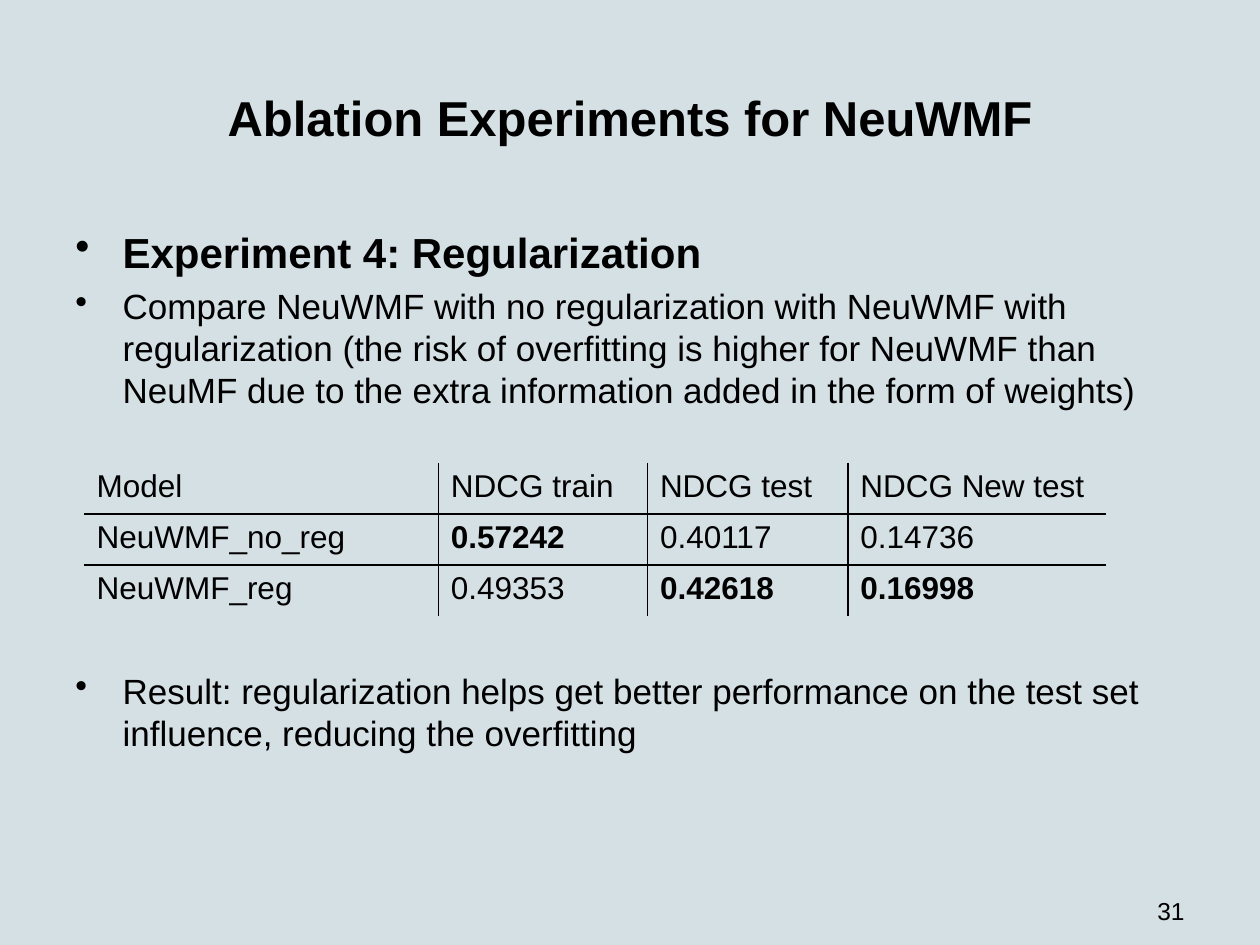
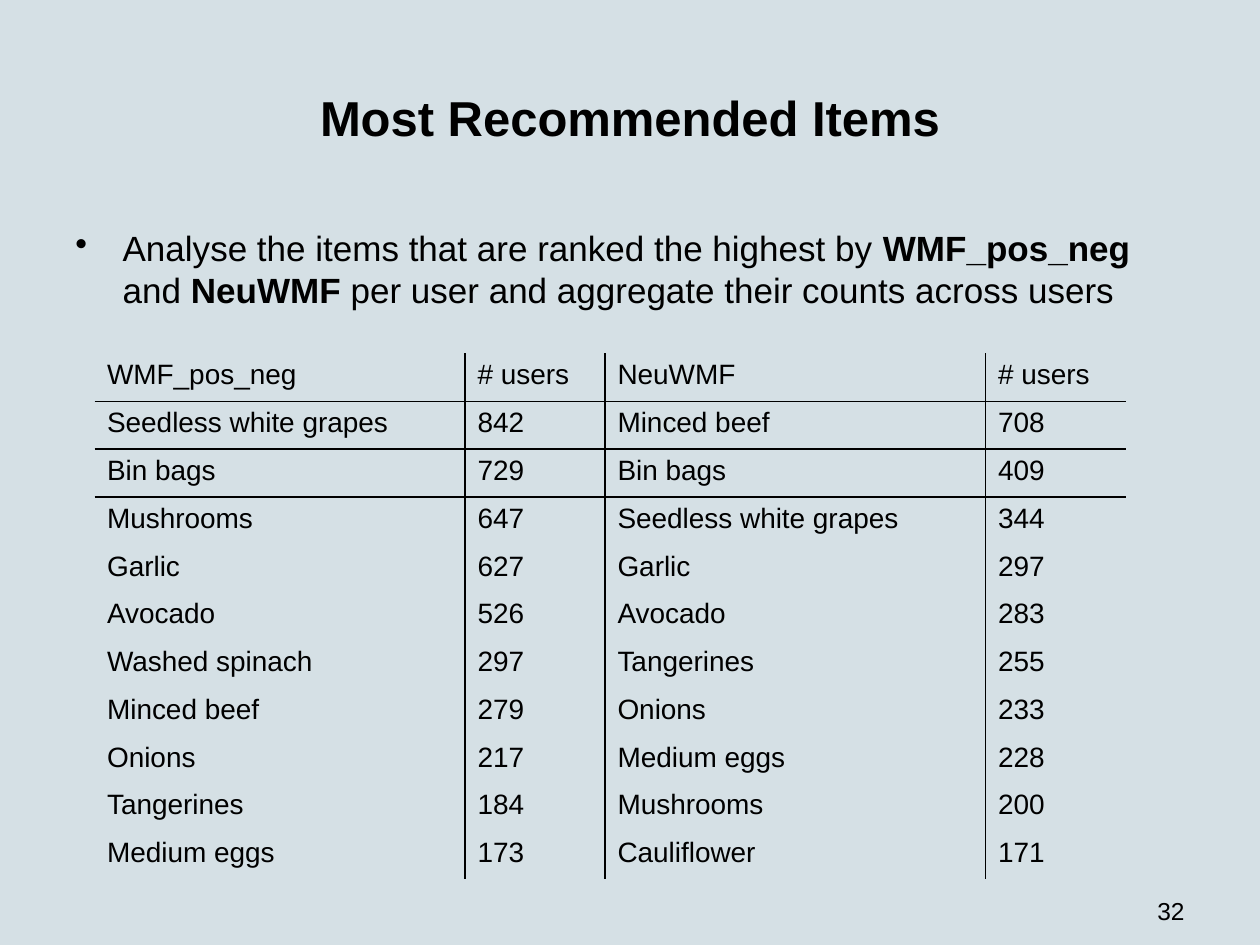
import pptx
import pptx.dml.color
import pptx.enum.text
import pptx.oxml
import pptx.oxml.ns
import pptx.util
from pptx.util import Pt

FONT = "Arial"
INK = "000000"
BACKGROUND = "D5E0E5"
NO_STYLE = "{2D5ABB26-0587-4C30-8999-92F81FD0307C}"  # "No Style, No Grid"
INDENT = Pt(27)

ALIGN = pptx.enum.text.PP_ALIGN
ANCHOR = pptx.enum.text.MSO_ANCHOR

SLIDES = [
    {
        "title": "Ablation Experiments for NeuWMF",
        "number": "31",
        # Each text block: top, height, and paragraphs of (size, [(text, bold)])
        "texts": [
            (126, 356, [
                (24, [("Experiment 4: Regularization", True)]),
                (20, [("Compare NeuWMF with no regularization with NeuWMF with "
                       "regularization (the risk of overfitting is higher for NeuWMF than "
                       "NeuMF due to the extra information added in the form of weights)", False)]),
            ]),
            (379, 130, [
                (20, [("Result: regularization helps get better performance on the test set "
                       "influence, reducing the overfitting", False)]),
            ]),
        ],
        "table": {
            "left": 48, "top": 264.5, "size": 18, "row_height": 29.2,
            "widths": [202.5, 119.5, 114.5, 147.5],
            "ruled_columns": 2,
            "bold": {(1, 1), (2, 2), (2, 3)},
            "rows": [
                ["Model", "NDCG train", "NDCG test", "NDCG New test"],
                ["NeuWMF_no_reg", "0.57242", "0.40117", "0.14736"],
                ["NeuWMF_reg", "0.49353", "0.42618", "0.16998"],
            ],
        },
    },
    {
        "title": "Most Recommended Items",
        "number": "32",
        "texts": [
            (126, 356, [
                (20, [("Analyse the items that are ranked the highest by ", False),
                      ("WMF_pos_neg", True),
                      (" and ", False),
                      ("NeuWMF", True),
                      (" per user and aggregate their counts across users", False)]),
            ]),
        ],
        "table": {
            "left": 54, "top": 202, "size": 16, "row_height": 27.3,
            "widths": [211.7, 80, 217.5, 80],
            "ruled_columns": 3,
            "bold": set(),
            "rows": [
                ["WMF_pos_neg", "# users", "NeuWMF", "# users"],
                ["Seedless white grapes", "842", "Minced beef", "708"],
                ["Bin bags", "729", "Bin bags", "409"],
                ["Mushrooms", "647", "Seedless white grapes", "344"],
                ["Garlic", "627", "Garlic", "297"],
                ["Avocado", "526", "Avocado", "283"],
                ["Washed spinach", "297", "Tangerines", "255"],
                ["Minced beef", "279", "Onions", "233"],
                ["Onions", "217", "Medium eggs", "228"],
                ["Tangerines", "184", "Mushrooms", "200"],
                ["Medium eggs", "173", "Cauliflower", "171"],
            ],
        },
    },
]


def color(hex_string):
    return pptx.dml.color.RGBColor.from_string(hex_string)


def add_run(paragraph, text, size, bold=False):
    run = paragraph.add_run()
    run.text = text
    run.font.name = FONT
    run.font.size = Pt(size)
    run.font.bold = bold
    run.font.color.rgb = color(INK)


presentation = pptx.Presentation()
presentation.slide_width = Pt(720)
presentation.slide_height = Pt(540)

# Shared background
background = presentation.slide_master.background.fill
background.solid()
background.fore_color.rgb = color(BACKGROUND)

for content in SLIDES:
    slide = presentation.slides.add_slide(presentation.slide_layouts[5])

    # Title
    title = slide.shapes.title
    title.left, title.top, title.width, title.height = Pt(36), Pt(21.6), Pt(648), Pt(90)
    title.text_frame.vertical_anchor = ANCHOR.MIDDLE
    paragraph = title.text_frame.paragraphs[0]
    paragraph.alignment = ALIGN.CENTER
    add_run(paragraph, content["title"], 28, True)

    # Bulleted text
    for top, height, paragraphs in content["texts"]:
        box = slide.shapes.add_textbox(Pt(36), Pt(top), Pt(648), Pt(height))
        frame = box.text_frame
        frame.word_wrap = True
        for index, (size, runs) in enumerate(paragraphs):
            paragraph = frame.add_paragraph() if index else frame.paragraphs[0]
            paragraph.space_before = paragraph.space_after = Pt(size / 10)
            properties = paragraph._p.get_or_add_pPr()
            properties.set("marL", str(INDENT))
            properties.set("indent", str(-INDENT))
            bullet = pptx.oxml.parse_xml(
                f'<a:buChar {pptx.oxml.ns.nsdecls("a")} char="•"/>')
            properties.append(bullet)
            for text, bold in runs:
                add_run(paragraph, text, size, bold)

    # Slide number
    box = slide.shapes.add_textbox(Pt(516), Pt(492), Pt(168), Pt(37))
    box.text_frame.word_wrap = True
    box.text_frame.margin_bottom = 0
    box.text_frame.vertical_anchor = ANCHOR.BOTTOM
    paragraph = box.text_frame.paragraphs[0]
    paragraph.alignment = ALIGN.RIGHT
    add_run(paragraph, content["number"], 14)

    # Table
    layout = content["table"]
    rows, widths = layout["rows"], layout["widths"]
    frame = slide.shapes.add_table(
        len(rows), len(widths), Pt(layout["left"]), Pt(layout["top"]),
        Pt(sum(widths)), Pt(layout["row_height"] * len(rows)))
    table = frame.table
    table.first_row = table.horz_banding = False
    table._tbl.tblPr.find(pptx.oxml.ns.qn("a:tableStyleId")).text = NO_STYLE
    for column, width in zip(table.columns, widths):
        column.width = Pt(width)
    for row_index, values in enumerate(rows):
        table.rows[row_index].height = Pt(layout["row_height"])
        for column_index, value in enumerate(values):
            cell = table.cell(row_index, column_index)
            add_run(cell.text_frame.paragraphs[0], value, layout["size"],
                    (row_index, column_index) in layout["bold"])

            # Rules follow the first two rows and the first few columns
            edges = {
                "lnL": 0 < column_index <= layout["ruled_columns"],
                "lnR": column_index < layout["ruled_columns"],
                "lnT": 0 < row_index <= 2,
                "lnB": row_index < 2,
            }
            properties = cell._tc.get_or_add_tcPr()
            for edge, ruled in edges.items():
                if ruled:
                    properties.append(pptx.oxml.parse_xml(
                        f'<a:{edge} {pptx.oxml.ns.nsdecls("a")} w="{Pt(1)}"><a:solidFill>'
                        f'<a:srgbClr val="{INK}"/></a:solidFill></a:{edge}>'))
            cell.fill.background()

presentation.save("out.pptx")
